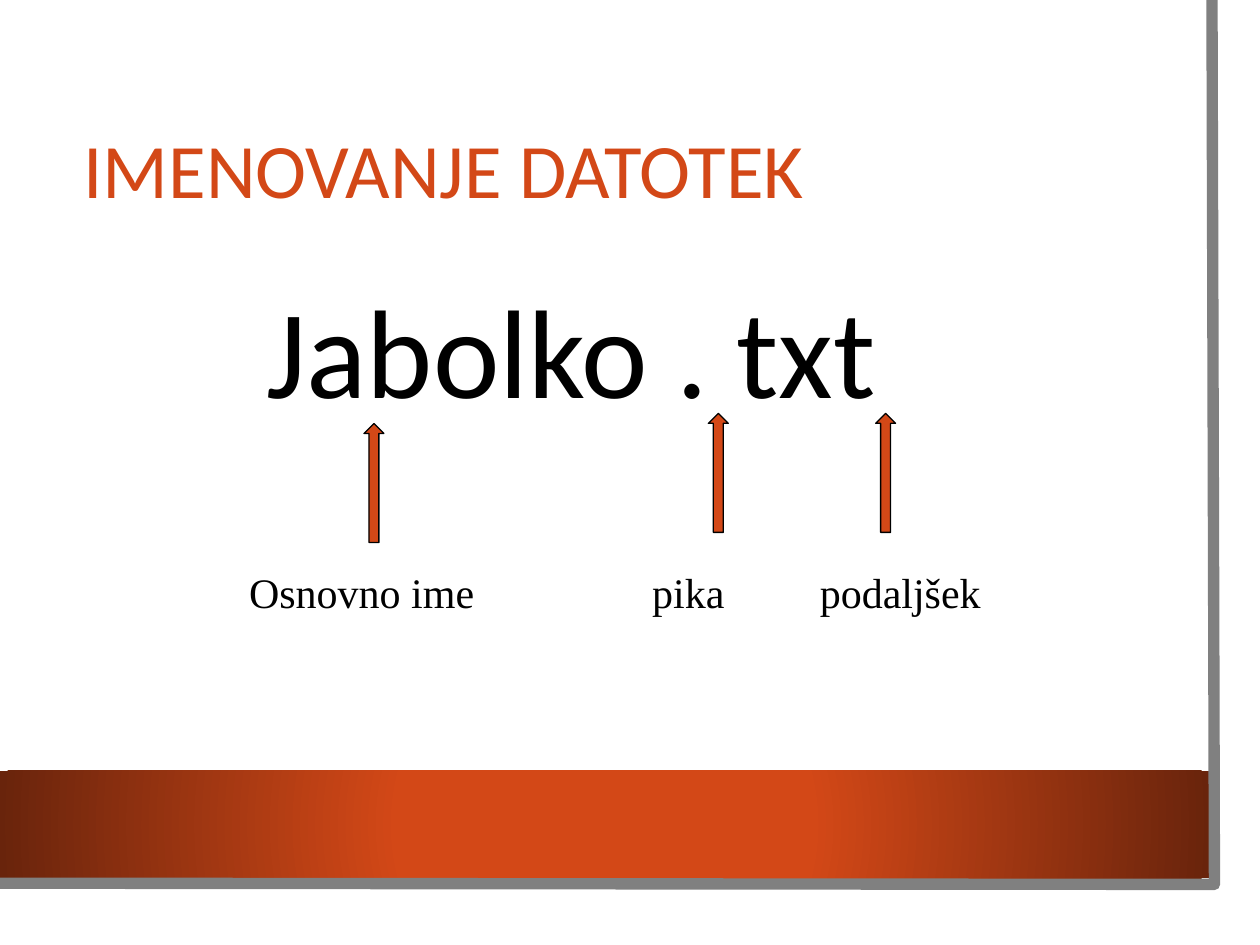
import pptx
import pptx.dml.color
import pptx.enum.shapes
import pptx.enum.text
import pptx.oxml
import pptx.oxml.ns
import pptx.util
from pptx.util import Pt

COLORS = {"accent": "D34817", "dark": "69240C", "frame": "808080", "text": "000000"}


class NamingSlide:
    """Draws the elements of one slide in a shared style, with lengths in points."""

    heading_font = "Calibri"
    label_font = "Times New Roman"

    def __init__(self, deck):
        self.slide = deck.slides.add_slide(deck.slide_layouts[6])
        self.shapes = self.slide.shapes

    def color(self, key):
        return pptx.dml.color.RGBColor.from_string(COLORS[key])

    def band(self, left, top, width, height):
        band = self.shapes.add_shape(
            pptx.enum.shapes.MSO_SHAPE.RECTANGLE, Pt(left), Pt(top), Pt(width), Pt(height))
        band.shadow.inherit = False
        band.line.fill.background()
        band.fill.gradient()
        stops = zip(band.fill.gradient_stops, (("accent", 0.34), ("dark", 1)))
        for stop, (key, position) in stops:
            stop.color.rgb = self.color(key)
            stop.position = position
        linear = band.fill._xPr.find(".//" + pptx.oxml.ns.qn("a:lin"))
        radial = pptx.oxml.parse_xml(
            '<a:path xmlns:a="http://schemas.openxmlformats.org/drawingml/2006/main" path="circle">'
            '<a:fillToRect l="50000" t="50000" r="50000" b="50000"/></a:path>')
        linear.getparent().replace(linear, radial)

    def frame(self, corners, weight):
        points = [(Pt(x), Pt(y)) for x, y in corners]
        builder = self.shapes.build_freeform(*points[0])
        builder.add_line_segments(points[1:], close=False)
        frame = builder.convert_to_shape()
        frame.shadow.inherit = False
        frame.fill.background()
        frame.line.color.rgb = self.color("frame")
        frame.line.width = Pt(weight)

    def text(self, words, left, top, width, height, size, font,
             key="text", align="LEFT", anchor="TOP", wrap=True, spacing=1.0):
        box = self.shapes.add_textbox(Pt(left), Pt(top), Pt(width), Pt(height))
        body = box.text_frame
        body.word_wrap = wrap
        body.vertical_anchor = pptx.enum.text.MSO_ANCHOR[anchor]
        paragraph = body.paragraphs[0]
        paragraph.alignment = pptx.enum.text.PP_ALIGN[align]
        paragraph.line_spacing = spacing
        run = paragraph.add_run()
        run.text = words
        run.font.name = font
        run.font.size = Pt(size)
        run.font.color.rgb = self.color(key)

    def arrow(self, left, top):
        arrow = self.shapes.add_shape(
            pptx.enum.shapes.MSO_SHAPE.UP_ARROW, Pt(left), Pt(top), Pt(11.4), Pt(68))
        arrow.shadow.inherit = False
        arrow.fill.solid()
        arrow.fill.fore_color.rgb = self.color("accent")
        arrow.line.color.rgb = self.color("text")
        arrow.line.width = Pt(0.75)


def main():
    deck = pptx.Presentation()
    deck.slide_width, deck.slide_height = Pt(720), Pt(540)
    page = NamingSlide(deck)
    page.band(0, 440.5, 691, 61.5)
    page.frame([(692.6, 0), (694, 505.4), (-1.4, 504.7)], 6.5)
    page.text("IMENOVANJE DATOTEK", 40.5, 54, 614, 90.5, 44, page.heading_font,
              key="accent", anchor="MIDDLE", spacing=0.9)
    page.text("Jabolko . txt", 73.5, 152, 506, 94.5, 72, page.heading_font, align="CENTER")

    name_parts = [
        ("Osnovno ime", 135.2, 144.6, 208, 242),
        ("pika", 365.6, 56.2, 404.8, 236.2),
        ("podaljšek", 461.4, 107.2, 500.4, 236.2),
    ]
    for label, left, width, arrow_left, arrow_top in name_parts:
        page.text(label, left, 320.4, width, 36.4, 24, page.label_font, wrap=False)
        page.arrow(arrow_left, arrow_top)
    deck.save("out.pptx")


if __name__ == "__main__":
    main()
